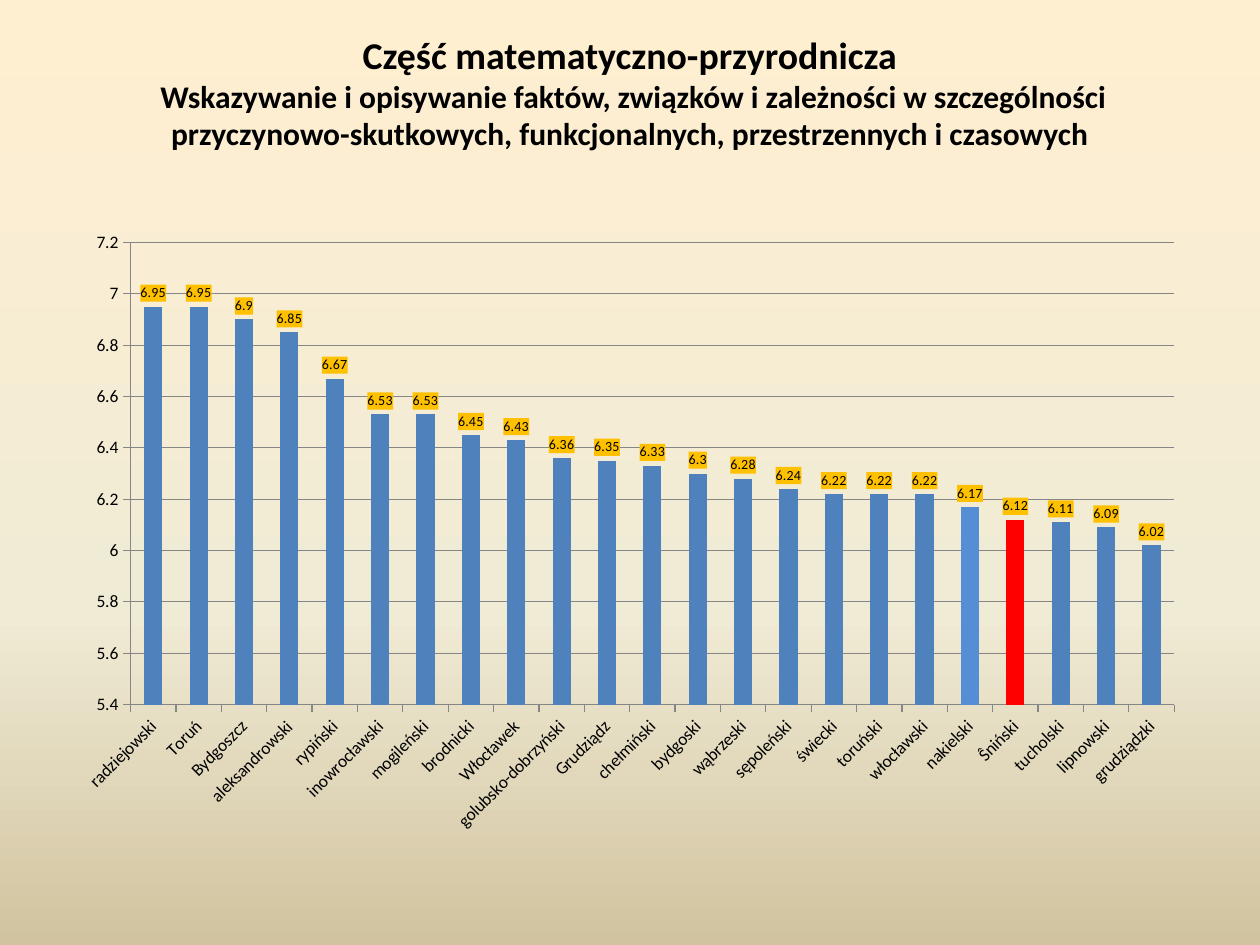
from copy import deepcopy

from lxml.etree import SubElement
from pptx import Presentation
from pptx.chart.data import CategoryChartData
from pptx.dml.color import RGBColor
from pptx.enum.chart import XL_CHART_TYPE, XL_LABEL_POSITION, XL_TICK_MARK
from pptx.enum.text import MSO_ANCHOR, MSO_AUTO_SIZE, PP_ALIGN
from pptx.oxml import parse_xml
from pptx.oxml.ns import nsdecls, qn
from pptx.util import Pt

FONT = "Calibri"
COLORS = {
    "text": "000000", "bar": "4F81BD", "neighbour": "558ED5",
    "highlight": "FF0000", "label": "FFC000", "grid": "868686",
}
BACKGROUND = [(0, "FFEFD1"), (0.65, "F0EBD5"), (1, "D1C39F")]
RESULTS = {
    "radziejowski": 6.95, "Toruń": 6.95, "Bydgoszcz": 6.9,
    "aleksandrowski": 6.85, "rypiński": 6.67, "inowrocławski": 6.53,
    "mogileński": 6.53, "brodnicki": 6.45, "Włocławek": 6.43,
    "golubsko-dobrzyński": 6.36, "Grudziądz": 6.35, "chełmiński": 6.33,
    "bydgoski": 6.3, "wąbrzeski": 6.28, "sępoleński": 6.24,
    "świecki": 6.22, "toruński": 6.22, "włocławski": 6.22,
    "nakielski": 6.17, "Ŝniński": 6.12, "tucholski": 6.11,
    "lipnowski": 6.09, "grudziądzki": 6.02,
}
POINT_COLORS = {"nakielski": "neighbour", "Ŝniński": "highlight"}


def rgb(name):
    return RGBColor.from_string(COLORS[name])


def format_font(font, size, color="text", bold=False):
    font.name, font.size, font.bold = FONT, Pt(size), bold
    font.color.rgb = rgb(color)


def add_text(p, text, **fmt):
    r = p.add_run()
    r.text = text
    format_font(r.font, **fmt)


def set_background(s):
    fill = s.background.fill
    fill.gradient()
    fill.gradient_angle = 270
    first = fill.gradient_stops[0]._gs
    first.addnext(deepcopy(first))
    for stop, (position, color) in zip(fill.gradient_stops, BACKGROUND):
        stop.position = position
        stop.color.rgb = RGBColor.from_string(color)


def fill_title(sp, left, top, width, height):
    sp.left, sp.top, sp.width, sp.height = map(Pt, (left, top, width, height))
    tf = sp.text_frame
    tf.word_wrap = True
    tf.auto_size = MSO_AUTO_SIZE.NONE
    tf.vertical_anchor = MSO_ANCHOR.MIDDLE
    tf.margin_bottom = Pt(55)  # lifts the heading above the chart
    p = tf.paragraphs[0]
    p.alignment = PP_ALIGN.CENTER
    add_text(p, "Część matematyczno-przyrodnicza", size=21.6, bold=True)
    p.add_line_break()
    add_text(p, " Wskazywanie i opisywanie faktów, związków i zależności w "
             "szczególności przyczynowo-skutkowych, funkcjonalnych, "
             "przestrzennych i czasowych", size=18, bold=True)


def set_plot_layout(chart, left, top, width, height, box_width, box_height):
    """Place the inner plot area, in points, within the chart's box."""
    plot_area = chart._chartSpace.chart.plotArea
    for old in plot_area.findall(qn("c:layout")):
        plot_area.remove(old)
    layout = parse_xml(f"<c:layout {nsdecls('c')}><c:manualLayout/></c:layout>")
    settings = {"layoutTarget": "inner", "xMode": "edge", "yMode": "edge",
                "x": left / box_width, "y": top / box_height,
                "w": width / box_width, "h": height / box_height}
    for tag, value in settings.items():
        SubElement(layout[0], qn(f"c:{tag}")).set("val", str(value))
    plot_area.insert(0, layout)


def format_axes(chart):
    for axis in (chart.category_axis, chart.value_axis):
        axis.major_tick_mark = XL_TICK_MARK.OUTSIDE
        axis.format.line.color.rgb = rgb("grid")
        format_font(axis.tick_labels.font, size=10)
    body = chart.category_axis._element.find(qn("c:txPr")).find(qn("a:bodyPr"))
    body.set("rot", "-2700000")
    axis = chart.value_axis
    axis.minimum_scale, axis.maximum_scale, axis.major_unit = 5.4, 7.2, 0.2
    axis.major_gridlines.format.line.color.rgb = rgb("grid")


def format_labels(labels):
    labels.show_value = True
    labels.position = XL_LABEL_POSITION.OUTSIDE_END
    format_font(labels.font, size=8)
    labels._element.find(qn("c:txPr")).addprevious(parse_xml(
        f"<c:spPr {nsdecls('c', 'a')}><a:solidFill>"
        f"<a:srgbClr val=\"{COLORS['label']}\"/></a:solidFill></c:spPr>"))


def add_results_chart(s, left, top, width, height):
    data = CategoryChartData()
    data.categories = list(RESULTS)
    data.add_series("Series 1", list(RESULTS.values()))
    chart = s.shapes.add_chart(XL_CHART_TYPE.COLUMN_CLUSTERED,
                               *map(Pt, (left, top, width, height)), data).chart
    chart.has_legend = chart.has_title = False
    format_font(chart.font, size=10)
    set_plot_layout(chart, 38.6, 12.6, 596.4, 264.1, width, height)
    format_axes(chart)
    plot = chart.plots[0]
    plot.gap_width, plot.vary_by_categories = 150, False
    series = plot.series[0]
    series.format.fill.solid()
    series.format.fill.fore_color.rgb = rgb("bar")
    for i, county in enumerate(RESULTS):
        if county in POINT_COLORS:
            fill = series.points[i].format.fill
            fill.solid()
            fill.fore_color.rgb = rgb(POINT_COLORS[county])
    format_labels(series.data_labels)


def main():
    prs = Presentation()
    prs.slide_width, prs.slide_height = Pt(720), Pt(540)
    s = prs.slides.add_slide(prs.slide_layouts[5])
    set_background(s)
    fill_title(s.shapes.title, 36, 44.64, 648, 66.96)
    add_results_chart(s, 36, 126, 648, 356.4)
    prs.save("out.pptx")


if __name__ == "__main__":
    main()
